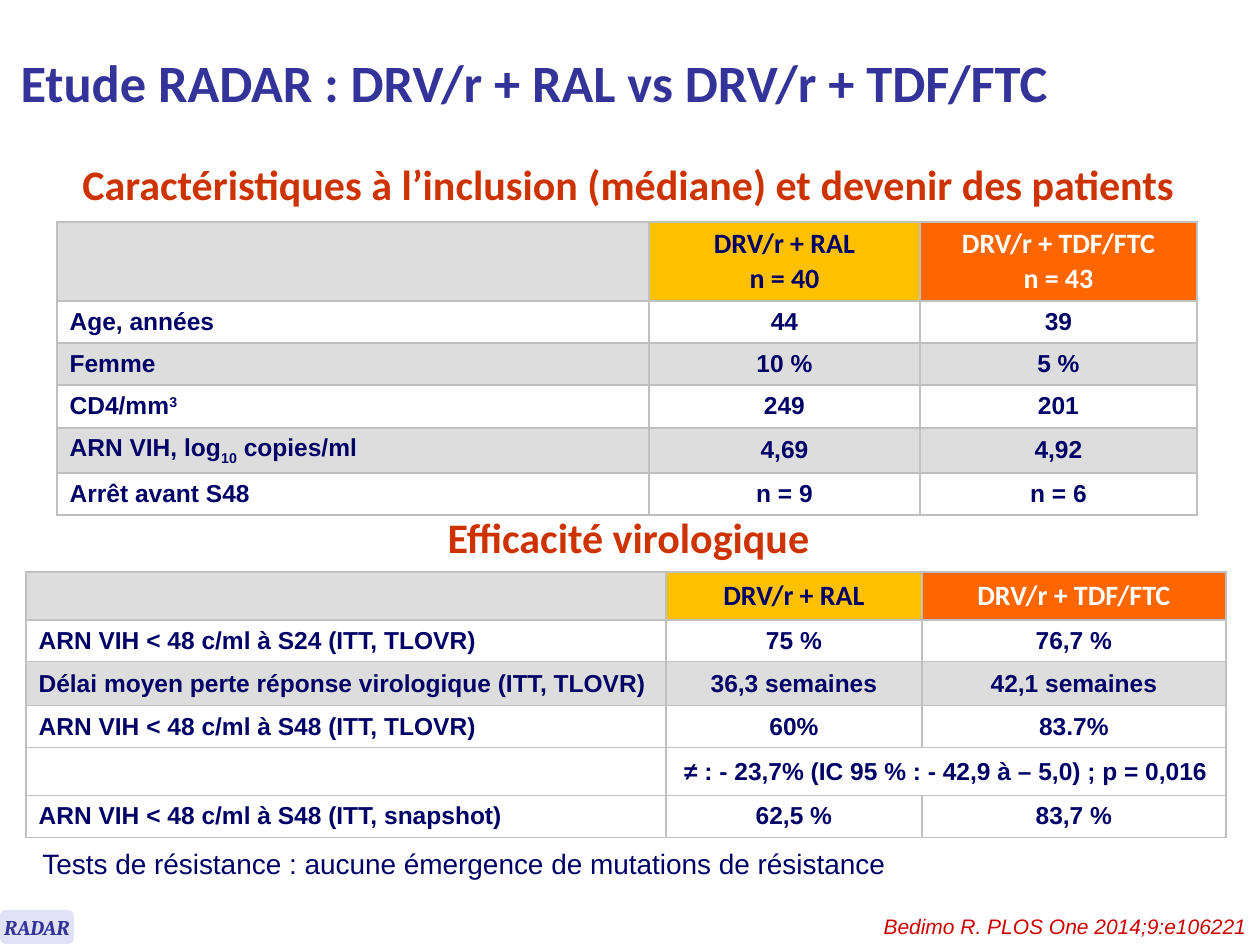
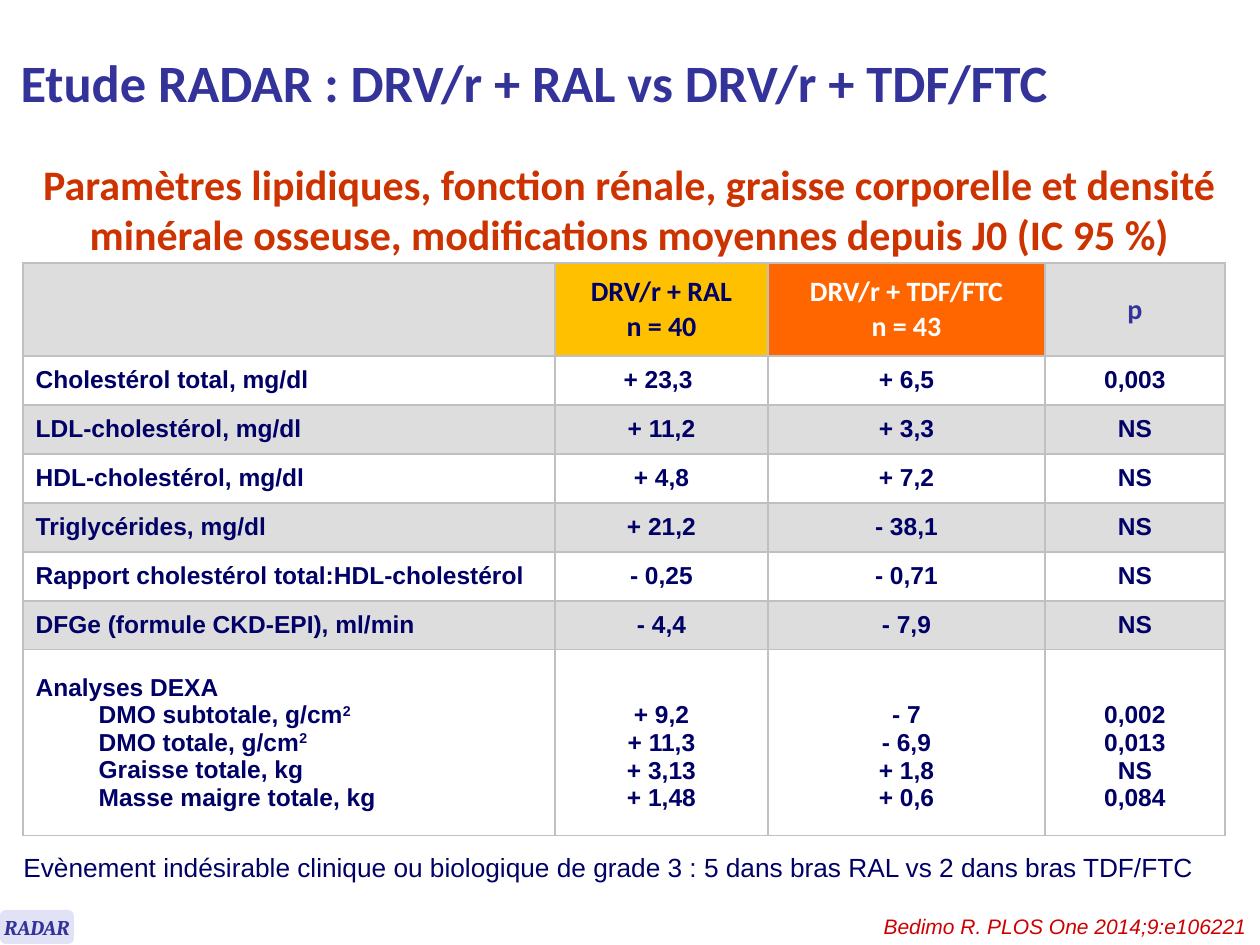
from dataclasses import dataclass

from lxml.etree import SubElement
from pptx import Presentation
from pptx.dml.color import RGBColor
from pptx.enum.shapes import MSO_SHAPE
from pptx.enum.text import MSO_ANCHOR as Anchor, MSO_AUTO_SIZE as AutoSize, PP_ALIGN as Align
from pptx.oxml.ns import qn
from pptx.util import Pt

EMU_PER_PX = 914400 / 126
TITLE_ONLY = 5
SCRIPTS = {"^": "30000", "_": "-25000"}


@dataclass(frozen=True)
class Theme:
    """Colours, fonts and type sizes shared by the slides."""
    indigo: str = "333399"
    navy: str = "000066"
    brick: str = "CC3300"
    red: str = "CC0000"
    white: str = "FFFFFF"
    grey: str = "DDDDDD"
    border: str = "C0C0C0"
    amber: str = "FFC000"
    orange: str = "FF6600"
    lavender: str = "E2E2F6"
    heading_font: str = "Calibri"
    body_font: str = "Arial"
    badge_font: str = "Cambria"
    title_size: int = 30
    heading_size: int = 24
    header_size: int = 16
    cell_size: int = 14
    small_size: int = 12


THEME = Theme()
HEADER_FILLS = (THEME.grey, THEME.amber, THEME.orange, THEME.grey)
HEADER_COLORS = (THEME.navy, THEME.navy, THEME.white, THEME.indigo)

STUDY_TITLE = "Etude RADAR : DRV/r + RAL vs DRV/r + TDF/FTC"
REFERENCE = "Bedimo R. PLOS One 2014;9:e106221"
ARMS = ("DRV/r + RAL", "DRV/r + TDF/FTC")
SIZED_ARMS = (f"{ARMS[0]}\nn = 40", f"{ARMS[1]}\nn = 43")

BASELINE_ROWS = (
    ("", *SIZED_ARMS),
    ("Age, années", "44", "39"),
    ("Femme", "10 %", "5 %"),
    ("CD4/mm{^3}", "249", "201"),
    ("ARN VIH, log{_10} copies/ml", "4,69", "4,92"),
    ("Arrêt avant S48", "n = 9", "n = 6"),
)
EFFICACY_ROWS = (
    ("", *ARMS),
    ("ARN VIH < 48 c/ml à S24 (ITT, TLOVR)", "75 %", "76,7 %"),
    ("Délai moyen perte réponse virologique (ITT, TLOVR)", "36,3 semaines", "42,1 semaines"),
    ("ARN VIH < 48 c/ml à S48 (ITT, TLOVR)", "60%", "83.7%"),
    ("", "≠ : - 23,7% (IC 95 % : - 42,9 à – 5,0) ; p = 0,016"),
    ("ARN VIH < 48 c/ml à S48 (ITT, snapshot)", "62,5 %", "83,7 %"),
)
SAFETY_ROWS = (
    ("", *SIZED_ARMS, "p"),
    ("Cholestérol total, mg/dl", "+ 23,3 ", "+ 6,5", "0,003"),
    ("LDL-cholestérol, mg/dl", "+ 11,2", "+ 3,3", "NS"),
    ("HDL-cholestérol, mg/dl", "+ 4,8", "+ 7,2", "NS"),
    ("Triglycérides, mg/dl", "+ 21,2", "- 38,1", "NS"),
    ("Rapport cholestérol total:HDL-cholestérol", "- 0,25", "- 0,71", "NS"),
    ("DFGe (formule CKD-EPI), ml/min", "- 4,4", "- 7,9", "NS"),
    ("Analyses DEXA\nDMO subtotale, g/cm{^2}\nDMO totale, g/cm{^2}\n"
     "Graisse totale, kg\nMasse maigre totale, kg",
     "+ 9,2\n+ 11,3\n+ 3,13\n+ 1,48", "- 7\n- 6,9\n+ 1,8\n+ 0,6",
     "0,002\n0,013\nNS\n0,084"),
)


def px(length):
    """Turn a length in px into EMU."""
    return round(length * EMU_PER_PX)


def rgb(color):
    """Turn a hex string into a colour."""
    return RGBColor.from_string(color)


def write(frame, text, *, size, color=THEME.navy, font=THEME.body_font, bold=False,
          italic=False, align=Align.LEFT, spacing=None, indent=0):
    """Write lines into a text frame, with {^up} and {_down} marking scripts."""
    for index, line in enumerate(text.split("\n")):
        paragraph = frame.paragraphs[0] if index == 0 else frame.add_paragraph()
        paragraph.alignment = align
        if spacing:
            paragraph.line_spacing = Pt(spacing)
        if indent and index:
            paragraph._p.get_or_add_pPr().set("marL", str(px(indent)))
        for piece in line.replace("}", "{").split("{"):
            run = paragraph.add_run()
            baseline = SCRIPTS.get(piece[:1])
            run.text = piece[1:] if baseline else piece
            run.font.size, run.font.name = Pt(size), font
            run.font.bold, run.font.italic = bold, italic
            run.font.color.rgb = rgb(color)
            if baseline:
                run.font._element.set("baseline", baseline)


def add_text(slide, box, text, *, anchor=Anchor.TOP, wrap=True, **style):
    """Add a text box."""
    frame = slide.shapes.add_textbox(*map(px, box)).text_frame
    frame.word_wrap, frame.vertical_anchor = wrap, anchor
    write(frame, text, **style)


def add_heading(slide, box, text, **style):
    """Add a centred section heading."""
    add_text(slide, box, text, size=THEME.heading_size, color=THEME.brick,
             font=THEME.heading_font, bold=True, align=Align.CENTER, **style)


def add_title(slide, box):
    """Place and fill the title placeholder."""
    title = slide.shapes.title
    title.left, title.top, title.width, title.height = map(px, box)
    frame = title.text_frame
    frame.auto_size, frame.word_wrap = AutoSize.NONE, True
    frame.vertical_anchor = Anchor.MIDDLE
    write(frame, STUDY_TITLE, size=THEME.title_size, color=THEME.indigo,
          font=THEME.heading_font, bold=True)


def add_footer(slide, badge_box, reference_box):
    """Add the study badge and the reference."""
    add_text(slide, reference_box, REFERENCE, wrap=False, size=THEME.small_size,
             color=THEME.red, italic=True, align=Align.RIGHT)
    badge = slide.shapes.add_shape(MSO_SHAPE.ROUNDED_RECTANGLE, *map(px, badge_box))
    badge.shadow.inherit = False
    badge.fill.solid()
    badge.fill.fore_color.rgb = rgb(THEME.lavender)
    badge.line.fill.background()
    badge.text_frame.word_wrap = False
    badge.text_frame.vertical_anchor = Anchor.MIDDLE
    write(badge.text_frame, "RADAR", size=THEME.small_size, color=THEME.indigo,
          font=THEME.badge_font, bold=True, italic=True, align=Align.CENTER)


def paint_cell(cell, fill):
    """Give a cell its borders, fill and margins."""
    properties = cell._tc.get_or_add_tcPr()
    for side in ("lnL", "lnR", "lnT", "lnB"):
        line = SubElement(properties, qn(f"a:{side}"), w=str(Pt(1)))
        SubElement(SubElement(line, qn("a:solidFill")), qn("a:srgbClr"), val=THEME.border)
    cell.fill.solid()
    cell.fill.fore_color.rgb = rgb(fill)
    cell.vertical_anchor = Anchor.MIDDLE
    cell.margin_top = cell.margin_bottom = px(5)


def add_results(slide, origin, widths, heights, rows, shaded):
    """Add a table of results, merging the end of any short row."""
    box = (*origin, sum(widths), sum(heights))
    table = slide.shapes.add_table(len(rows), len(widths), *map(px, box)).table
    table.first_row = table.horz_banding = False
    for column, width in zip(table.columns, widths):
        column.width = px(width)
    for row_index, (texts, height) in enumerate(zip(rows, heights)):
        table.rows[row_index].height = px(height)
        for column_index in range(len(widths)):
            fill = THEME.grey if row_index in shaded else THEME.white
            paint_cell(table.cell(row_index, column_index),
                       fill if row_index else HEADER_FILLS[column_index])
        if len(texts) < len(widths):
            table.cell(row_index, len(texts) - 1).merge(table.cell(row_index, len(widths) - 1))
        for column_index, text in enumerate(texts):
            cell = table.cell(row_index, column_index)
            if row_index == 0:
                write(cell.text_frame, text, size=THEME.header_size, bold=True,
                      font=THEME.heading_font, color=HEADER_COLORS[column_index],
                      align=Align.CENTER)
                continue
            missing_lines = texts[0].count("\n") - text.count("\n")
            cell.margin_top = px(5 + 28 * missing_lines)
            write(cell.text_frame, text, size=THEME.cell_size, bold=True,
                  align=Align.CENTER if column_index else Align.LEFT,
                  indent=0 if column_index else 63)


def add_study_slide(presentation):
    """Add a slide with the shared title and footer."""
    slide = presentation.slides.add_slide(presentation.slide_layouts[TITLE_ONLY])
    add_title(slide, (8, 6, 1129, 152))
    add_footer(slide, (0, 910, 74, 34), (862, 907, 397, 38))
    return slide


def build_efficacy(presentation):
    """Build the slide on baseline characteristics and efficacy."""
    slide = add_study_slide(presentation)
    heading = {"anchor": Anchor.MIDDLE, "wrap": False, "spacing": 15.2}
    add_heading(slide, (64, 176, 1129, 39),
                "Caractéristiques à l’inclusion (médiane) et devenir des patients", **heading)
    add_results(slide, (57, 222), (592, 271, 277), (79, 42, 42, 43, 45, 42),
                BASELINE_ROWS, shaded=(2, 4))
    add_heading(slide, (432, 527, 393, 44), "Efficacité virologique", **heading)
    add_results(slide, (26, 572), (640, 256, 304), (46, 42, 44, 42, 42, 42),
                EFFICACY_ROWS, shaded=(2,))
    add_text(slide, (30, 840, 1140, 47),
             "Tests de résistance : aucune émergence de mutations de résistance", size=16)


def build_safety(presentation):
    """Build the slide on lipids, renal function and body composition."""
    slide = add_study_slide(presentation)
    add_heading(slide, (11, 152, 1237, 115),
                "Paramètres lipidiques, fonction rénale, graisse corporelle et densité "
                "minérale osseuse, modifications moyennes depuis J0 (IC 95 %)")
    add_results(slide, (23, 263), (532, 213, 277, 180), (93, *[49] * 6, 186),
                SAFETY_ROWS, shaded=(2, 4, 6))
    add_text(slide, (11, 845, 1207, 44),
             "Evènement indésirable clinique ou biologique de grade 3 : "
             "5 dans bras RAL vs 2 dans bras TDF/FTC", wrap=False, size=15)


def main():
    """Build and save the presentation."""
    presentation = Presentation()
    presentation.slide_width, presentation.slide_height = px(1260), px(945)
    build_efficacy(presentation)
    build_safety(presentation)
    presentation.save("out.pptx")


if __name__ == "__main__":
    main()
